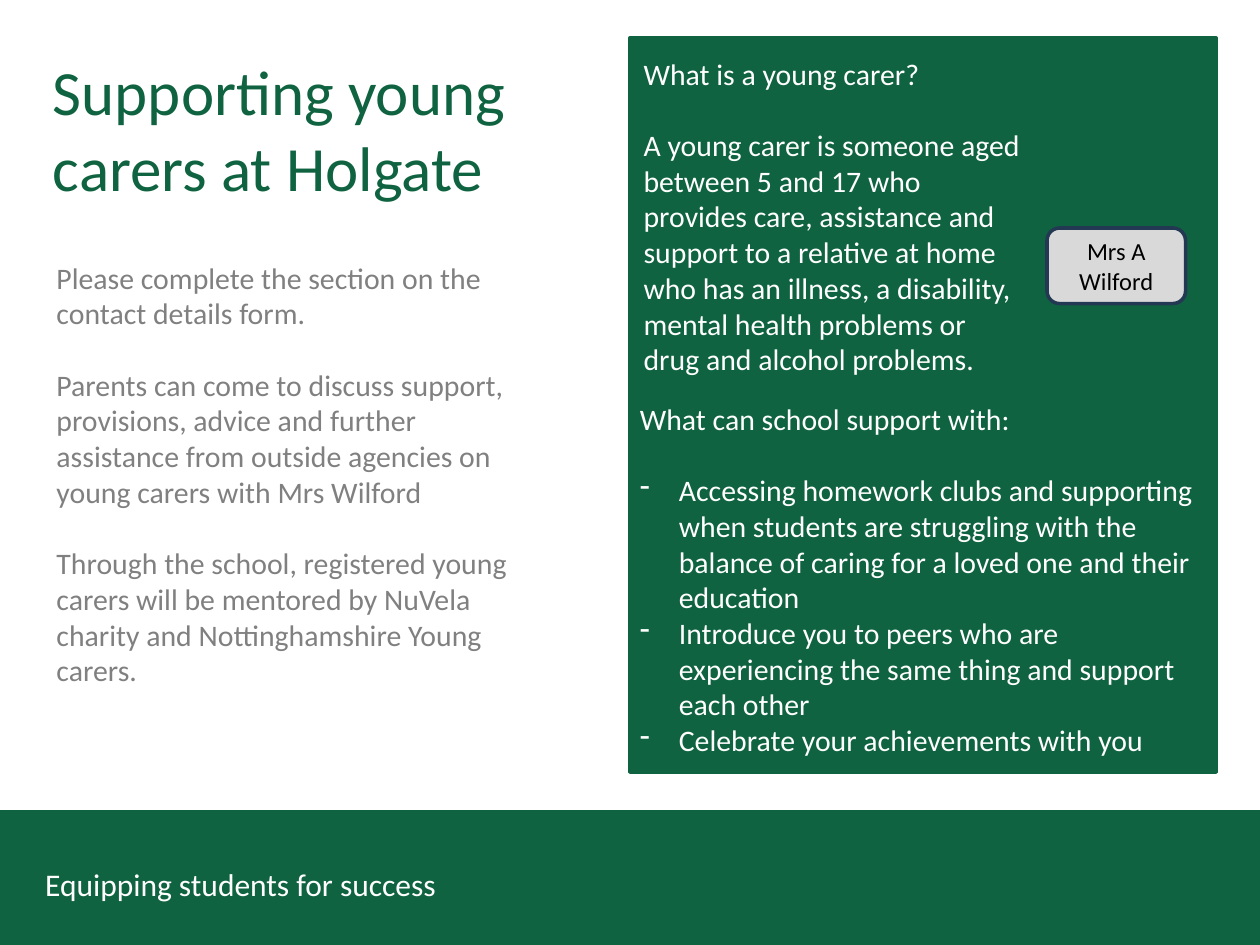
from dataclasses import dataclass
from typing import Optional

from lxml import etree
from pptx import Presentation
from pptx import util as u
from pptx.dml.color import RGBColor
from pptx.enum import shapes, text
from pptx.oxml.ns import qn

GREEN = RGBColor(0x0F, 0x63, 0x40)
GREY = RGBColor(0x80, 0x80, 0x80)
LIGHT = RGBColor(0xD9, 0xD9, 0xD9)
NAVY = RGBColor(0x23, 0x39, 0x53)
WHITE = RGBColor(0xFF, 0xFF, 0xFF)
BLACK = RGBColor(0, 0, 0)

BODY_SIZE = 17
LINE_GAP = u.Pt(20.4)  # one line of body text
INDENT = u.Inches(0.31)


@dataclass
class Box:
    left: float
    top: float
    width: float
    height: float

    def lengths(self) -> tuple:
        return tuple(u.Inches(v) for v in (self.left, self.top, self.width, self.height))


@dataclass
class Panel:
    box: Box
    fill: RGBColor
    line: Optional[RGBColor] = None
    kind: int = shapes.MSO_SHAPE.RECTANGLE


@dataclass
class Para:
    words: str
    bullet: bool = False
    gap: bool = False


@dataclass
class TextBlock:
    box: Box
    paras: list
    color: RGBColor
    size: float = BODY_SIZE


def set_all(target, values: dict) -> None:
    for name, value in values.items():
        setattr(target, name, value)


def style_font(font, size: float, color: RGBColor) -> None:
    set_all(font, {"name": "Calibri", "size": u.Pt(size), "bold": False})
    font.color.rgb = color


def add_dash(paragraph) -> None:
    props = paragraph._p.get_or_add_pPr()
    props.set("marL", str(INDENT))
    props.set("indent", str(-INDENT))
    etree.SubElement(props, qn("a:buFontTx"))
    etree.SubElement(props, qn("a:buChar")).set("char", "-")


def fill_frame(frame, paras: list, size: float, color: RGBColor, **layout) -> None:
    set_all(frame, {"word_wrap": True, "auto_size": text.MSO_AUTO_SIZE.NONE,
                    "vertical_anchor": text.MSO_ANCHOR.TOP, **layout})
    for i, para in enumerate(paras):
        paragraph = frame.paragraphs[0] if i == 0 else frame.add_paragraph()
        if para.gap:
            paragraph.space_before = LINE_GAP
        if para.bullet:
            add_dash(paragraph)
        run = paragraph.add_run()
        run.text = para.words
        style_font(run.font, size, color)


def draw_panel(slide, panel: Panel):
    shape = slide.shapes.add_shape(panel.kind, *panel.box.lengths())
    shape.shadow.inherit = False
    shape.fill.solid()
    shape.fill.fore_color.rgb = panel.fill
    if panel.line is None:
        shape.line.fill.background()
    else:
        shape.line.color.rgb = panel.line
        shape.line.width = u.Pt(2)
    return shape


def draw_text(slide, block: TextBlock) -> None:
    frame = slide.shapes.add_textbox(*block.box.lengths()).text_frame
    fill_frame(frame, block.paras, block.size, block.color)


FOOTER_BAND = Panel(Box(0, 6.43, 10, 1.07), GREEN)
INFO_PANEL = Panel(Box(5, 0.3, 4.65, 5.83), GREEN, GREEN)
CONTACT_BADGE = Panel(Box(8.31, 1.81, 1.1, 0.6), LIGHT, NAVY,
                      shapes.MSO_SHAPE.ROUNDED_RECTANGLE)

TEXT_BLOCKS = [
    TextBlock(Box(0.35, 2.01, 3.86, 3.84), [
        Para("Please complete the section on the contact details form."),
        Para("Parents can come to discuss support, provisions, advice and further "
             "assistance from outside agencies on young carers with Mrs Wilford", gap=True),
        Para("Through the school, registered young carers will be mentored by NuVela "
             "charity and Nottinghamshire Young carers.", gap=True),
    ], GREY),
    TextBlock(Box(5.01, 0.39, 3.2, 2.68), [
        Para("What is a young carer?"),
        Para("A young carer is someone aged between 5 and 17 who provides care, "
             "assistance and support to a relative at home who has an illness, a "
             "disability, mental health problems or drug and alcohol problems.", gap=True),
    ], WHITE),
    TextBlock(Box(4.98, 3.13, 4.63, 3.26), [
        Para("What can school support with:"),
        Para("Accessing homework clubs and supporting when students are struggling "
             "with the balance of caring for a loved one and their education",
             bullet=True, gap=True),
        Para("Introduce you to peers who are experiencing the same thing and support "
             "each other", bullet=True),
        Para("Celebrate your achievements with you", bullet=True),
    ], WHITE),
    TextBlock(Box(0.26, 6.82, 5.75, 0.4),
              [Para("Equipping students for success")], WHITE, 18),
]


def main() -> None:
    deck = Presentation()
    set_all(deck, {"slide_width": u.Inches(10), "slide_height": u.Inches(7.5)})
    slide = deck.slides.add_slide(deck.slide_layouts[5])

    # Title
    title = slide.shapes.title
    place = Box(0.32, 0.37, 4.39, 1.31).lengths()
    set_all(title, dict(zip(("left", "top", "width", "height"), place)))
    fill_frame(title.text_frame, [Para("Supporting young carers at Holgate")], 36, GREEN)
    title.text_frame.paragraphs[0].alignment = text.PP_ALIGN.LEFT

    # Footer band and information panel
    for panel in (FOOTER_BAND, INFO_PANEL):
        draw_panel(slide, panel)

    # Contact badge
    badge = draw_panel(slide, CONTACT_BADGE).text_frame
    fill_frame(badge, [Para("Mrs A Wilford")], 14, BLACK,
               vertical_anchor=text.MSO_ANCHOR.MIDDLE)
    badge.paragraphs[0].alignment = text.PP_ALIGN.CENTER

    # Text
    for block in TEXT_BLOCKS:
        draw_text(slide, block)

    deck.save("out.pptx")


if __name__ == "__main__":
    main()
